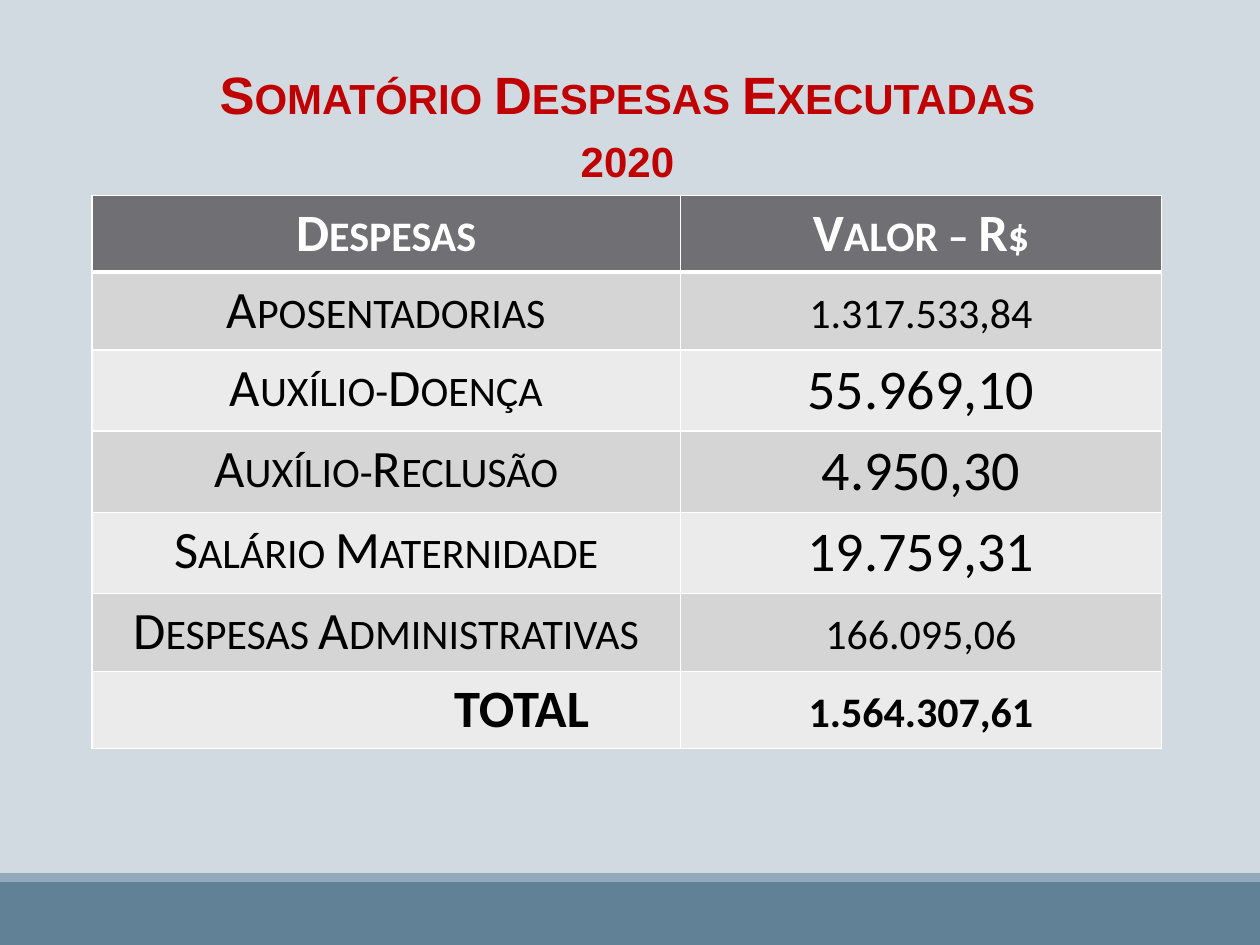
"""Build the slide with the table of expenses executed in 2020."""
from lxml import etree
from pptx import Presentation
from pptx.dml.color import RGBColor
from pptx.enum.shapes import MSO_SHAPE
from pptx.enum.text import MSO_ANCHOR, MSO_AUTO_SIZE, PP_ALIGN
from pptx.oxml.ns import qn
from pptx.util import Inches, Pt

RECTANGLE = MSO_SHAPE.RECTANGLE
CENTER = PP_ALIGN.CENTER
TOP = MSO_ANCHOR.TOP
NO_AUTOFIT = MSO_AUTO_SIZE.NONE

TITLE = ["Somatório Despesas Executadas", "2020"]
HEADER = ("Despesas", "Valor – R$")
EXPENSES = [
    ("Aposentadorias", "1.317.533,84"),
    ("Auxílio-Doença", "55.969,10"),
    ("Auxílio-Reclusão", "4.950,30"),
    ("Salário Maternidade", "19.759,31"),
    ("Despesas Administrativas", "166.095,06"),
]
TOTAL = ("TOTAL", "1.564.307,61")
LARGE_VALUES = {"55.969,10", "4.950,30", "19.759,31"}

THEME = {
    "background": "D1D9E1", "footer": "618197", "footer_edge": "92A9B9",
    "title": "C00000", "header": "6F6F74", "header_text": "FFFFFF",
    "text": "000000", "bands": ("EBEBEB", "D5D5D6"), "border": "FFFFFF",
    "title_font": "Arial", "table_font": "Calibri",
    "size": 30, "large_size": 32, "border_width": 1, "header_rule": 3,
}
SLIDE_SIZE = (10, 7.5)
TITLE_BOX = (0.73, 0.44, 8.7, 1.11)
TITLE_SPACE_BEFORE = 3.6
TITLE_RIGHT_INDENT = 0.2
TABLE_ORIGIN = (0.73, 1.55)
COLUMN_WIDTHS = (4.67, 3.82)
ROW_HEIGHTS = (0.6, 0.62, 0.6, 0.6, 0.6, 0.62, 0.6)
TOTAL_LEFT_MARGIN = 1.18
FOOTER_BARS = [((0, 7, 10, 0.5), "footer"), ((0, 6.93, 10, 0.07), "footer_edge")]


def inches(values):
    return [Inches(value) for value in values]


def paint(fill, color):
    fill.solid()
    fill.fore_color.rgb = RGBColor.from_string(color)


def write(paragraph, text, *, font, color, size=THEME["size"], bold=False, small_caps=True):
    paragraph.alignment = CENTER
    run = paragraph.add_run()
    run.text = text
    run.font.name = font
    run.font.size = Pt(size)
    run.font.bold = bold
    run.font.color.rgb = RGBColor.from_string(color)
    run._r.get_or_add_rPr().set("cap", "small" if small_caps else "none")


def set_borders(cell, widths):
    properties = cell._tc.get_or_add_tcPr()
    for index, (side, width) in enumerate(widths.items()):
        line = etree.Element(qn(f"a:ln{side}"), w=str(Pt(width)))
        fill = etree.SubElement(line, qn("a:solidFill"))
        etree.SubElement(fill, qn("a:srgbClr"), val=THEME["border"])
        properties.insert(index, line)


def add_footer(slide):
    for box, color in FOOTER_BARS:
        bar = slide.shapes.add_shape(RECTANGLE, *inches(box))
        bar.shadow.inherit = False
        paint(bar.fill, THEME[color])
        bar.line.fill.background()


def add_title(slide):
    title = slide.shapes.title
    title.left, title.top, title.width, title.height = inches(TITLE_BOX)
    frame = title.text_frame
    frame.word_wrap = True
    frame.auto_size = NO_AUTOFIT
    frame.vertical_anchor = TOP
    for index, text in enumerate(TITLE):
        paragraph = frame.add_paragraph() if index else frame.paragraphs[0]
        write(paragraph, text, font=THEME["title_font"], color=THEME["title"], bold=True)
    first = frame.paragraphs[0]
    first.space_before = Pt(TITLE_SPACE_BEFORE)
    first._p.get_or_add_pPr().set("marR", str(Inches(TITLE_RIGHT_INDENT)))


def add_expense_table(slide):
    rows = [HEADER, *EXPENSES, TOTAL]
    size = (sum(COLUMN_WIDTHS), sum(ROW_HEIGHTS))
    table = slide.shapes.add_table(
        len(rows), len(HEADER), *inches(TABLE_ORIGIN + size)).table
    for column, width in zip(table.columns, COLUMN_WIDTHS):
        column.width = Inches(width)
    for row_index, (row, height) in enumerate(zip(rows, ROW_HEIGHTS)):
        table.rows[row_index].height = Inches(height)
        is_header = row_index == 0
        for column_index, text in enumerate(row):
            cell = table.cell(row_index, column_index)
            is_large = text in LARGE_VALUES
            write(cell.text_frame.paragraphs[0], text,
                  font=THEME["table_font"],
                  color=THEME["header_text" if is_header else "text"],
                  size=THEME["large_size" if is_large else "size"],
                  bold=is_header or row is TOTAL,
                  small_caps=not is_large)
            paint(cell.fill, THEME["header"] if is_header else THEME["bands"][row_index % 2])
            widths = dict.fromkeys("LRTB", THEME["border_width"])
            if is_header:
                widths["B"] = THEME["header_rule"]
            elif row_index == 1:
                widths["T"] = THEME["header_rule"]
            set_borders(cell, widths)
    table.cell(len(rows) - 1, 0).margin_left = Inches(TOTAL_LEFT_MARGIN)


def main():
    presentation = Presentation()
    presentation.slide_width, presentation.slide_height = inches(SLIDE_SIZE)
    slide = presentation.slides.add_slide(presentation.slide_layouts[5])
    paint(slide.background.fill, THEME["background"])
    add_footer(slide)
    add_title(slide)
    add_expense_table(slide)
    presentation.save("out.pptx")


if __name__ == "__main__":
    main()
